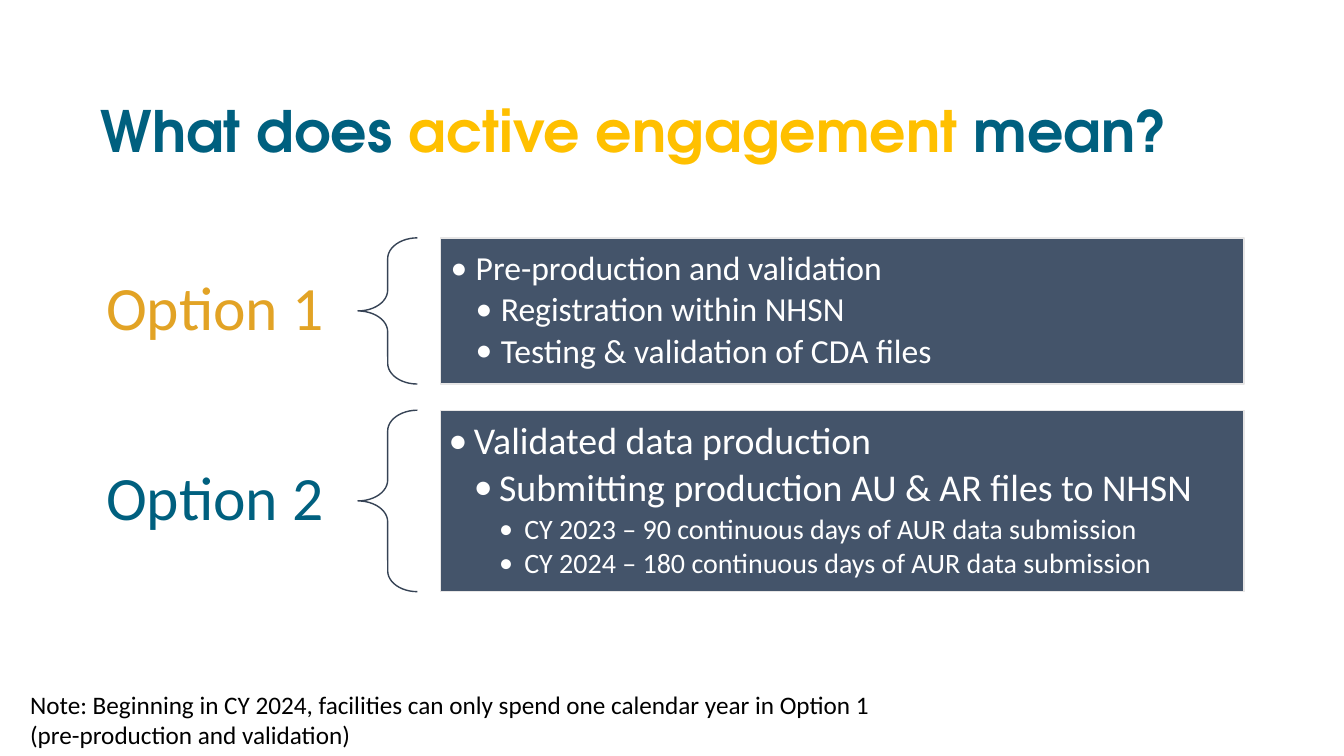
from dataclasses import dataclass

from lxml.etree import SubElement
from pptx import Presentation
from pptx.dml.color import RGBColor
from pptx.enum.shapes import MSO_SHAPE
from pptx.enum.text import MSO_ANCHOR, PP_ALIGN
from pptx.oxml.ns import qn
from pptx.shapes.autoshape import Shape
from pptx.slide import Slide
from pptx.text.text import Font, TextFrame
from pptx.util import Inches, Pt

COLORS = {
    "teal": "00607F",
    "yellow": "FFC000",
    "gold": "E2A325",
    "slate": "44546A",
    "brace": "364355",
    "border": "E7E6E6",
    "white": "FFFFFF",
    "black": "000000",
}
CELL = 0.1
HEADING_FONT = "TeX Gyre Adventor"
BODY_FONT = "Calibri"
INDENT = 0.25


@dataclass(frozen=True)
class Region:
    column: float
    row: float
    columns: float
    rows: float

    def lengths(self) -> list[int]:
        return [Inches(cells * CELL) for cells in (self.column, self.row, self.columns, self.rows)]


@dataclass(frozen=True)
class Bullet:
    text: str
    level: int
    size: float


@dataclass(frozen=True)
class Option:
    label: str
    color: str
    row: float
    rows: float
    inset: float
    bullets: tuple[Bullet, ...]


OPTIONS = (
    Option("Option 1", "gold", 23.6, 14.5, 0.1, (
        Bullet("Pre-production and validation", 1, 24),
        Bullet("Registration within NHSN", 2, 24),
        Bullet("Testing & validation of CDA files", 2, 24),
    )),
    Option("Option 2", "teal", 40.7, 18, 0.08, (
        Bullet("Validated data production", 1, 27),
        Bullet("Submitting production AU & AR files to NHSN", 2, 27),
        Bullet("CY 2023 – 90 continuous days of AUR data submission", 3, 20),
        Bullet("CY 2024 – 180 continuous days of AUR data submission", 3, 20),
    )),
)
TITLE = (
    ("What does ", "teal"),
    ("active engagement ", "yellow"),
    ("mean?", "teal"),
)


def rgb(name: str) -> RGBColor:
    return RGBColor.from_string(COLORS[name])


def set_font(font: Font, name: str, size: float, color: str, bold: bool = False) -> None:
    font.name = name
    font.size = Pt(size)
    font.bold = bold
    font.color.rgb = rgb(color)


def set_insets(frame: TextFrame, across: float, down: float) -> None:
    frame.margin_left = frame.margin_right = Inches(across)
    frame.margin_top = frame.margin_bottom = Inches(down)


def add_text_box(page: Slide, region: Region) -> TextFrame:
    frame = page.shapes.add_textbox(*region.lengths()).text_frame
    frame.word_wrap = True
    return frame


def add_outline(page: Slide, kind: MSO_SHAPE, region: Region, color: str) -> Shape:
    shape = page.shapes.add_shape(kind, *region.lengths())
    shape.shadow.inherit = False
    shape.line.color.rgb = rgb(color)
    shape.line.width = Pt(1)
    return shape


def add_title(page: Slide) -> None:
    frame = add_text_box(page, Region(10, 10.2, 113.3, 6.3))
    set_insets(frame, 0, 0)
    para = frame.paragraphs[0]
    para.line_spacing = 0.9
    for text, color in TITLE:
        span = para.add_run()
        span.text = text
        set_font(span.font, HEADING_FONT, 40.7, color, True)


def add_bullets(frame: TextFrame, bullets: tuple[Bullet, ...]) -> None:
    for index, bullet in enumerate(bullets):
        para = frame.add_paragraph() if index else frame.paragraphs[0]
        para.text = bullet.text
        para.level = bullet.level
        para.alignment = PP_ALIGN.LEFT
        para.line_spacing = 0.9
        para.space_after = Pt(round(bullet.size * 0.15, 1))
        properties = para._p.get_or_add_pPr()
        properties.set("marL", str(Inches(bullet.level * INDENT)))
        properties.set("indent", str(-Inches(INDENT)))
        SubElement(properties, qn("a:buFont"), typeface=BODY_FONT)
        SubElement(properties, qn("a:buChar"), char="•")
        set_font(para.font, BODY_FONT, bullet.size, "white")


def add_option(page: Slide, option: Option) -> None:
    label = add_text_box(page, Region(6.2, option.row, 29.3, option.rows))
    set_insets(label, 0.34, 0.12)
    label.vertical_anchor = MSO_ANCHOR.MIDDLE
    para = label.paragraphs[0]
    para.text = option.label
    para.alignment = PP_ALIGN.RIGHT
    para.line_spacing = 0.9
    set_font(para.font, BODY_FONT, 44, option.color)

    brace = add_outline(page, MSO_SHAPE.LEFT_BRACE, Region(35.5, option.row, 5.9, option.rows), "brace")
    brace.fill.background()
    brace.adjustments[0] = 0.35
    brace.adjustments[1] = 0.5

    panel = add_outline(page, MSO_SHAPE.RECTANGLE, Region(43.7, option.row, 79.7, option.rows), "border")
    panel.fill.solid()
    panel.fill.fore_color.rgb = rgb("slate")
    frame = panel.text_frame
    frame.word_wrap = True
    frame.vertical_anchor = MSO_ANCHOR.MIDDLE
    set_insets(frame, option.inset, option.inset)
    add_bullets(frame, option.bullets)


def add_note(page: Slide) -> None:
    note = add_text_box(page, Region(2, 67.9, 89.1, 7.1))
    note.text = (
        "Note: Beginning in CY 2024, facilities can only spend one calendar year "
        "in Option 1 (pre-production and validation)"
    )
    set_font(note.paragraphs[0].font, BODY_FONT, 18, "black")


def main() -> None:
    deck = Presentation()
    deck.slide_width = Inches(13.33)
    deck.slide_height = Inches(7.5)
    page = deck.slides.add_slide(deck.slide_layouts[6])
    add_title(page)
    for option in OPTIONS:
        add_option(page, option)
    add_note(page)
    deck.save("out.pptx")


if __name__ == "__main__":
    main()
